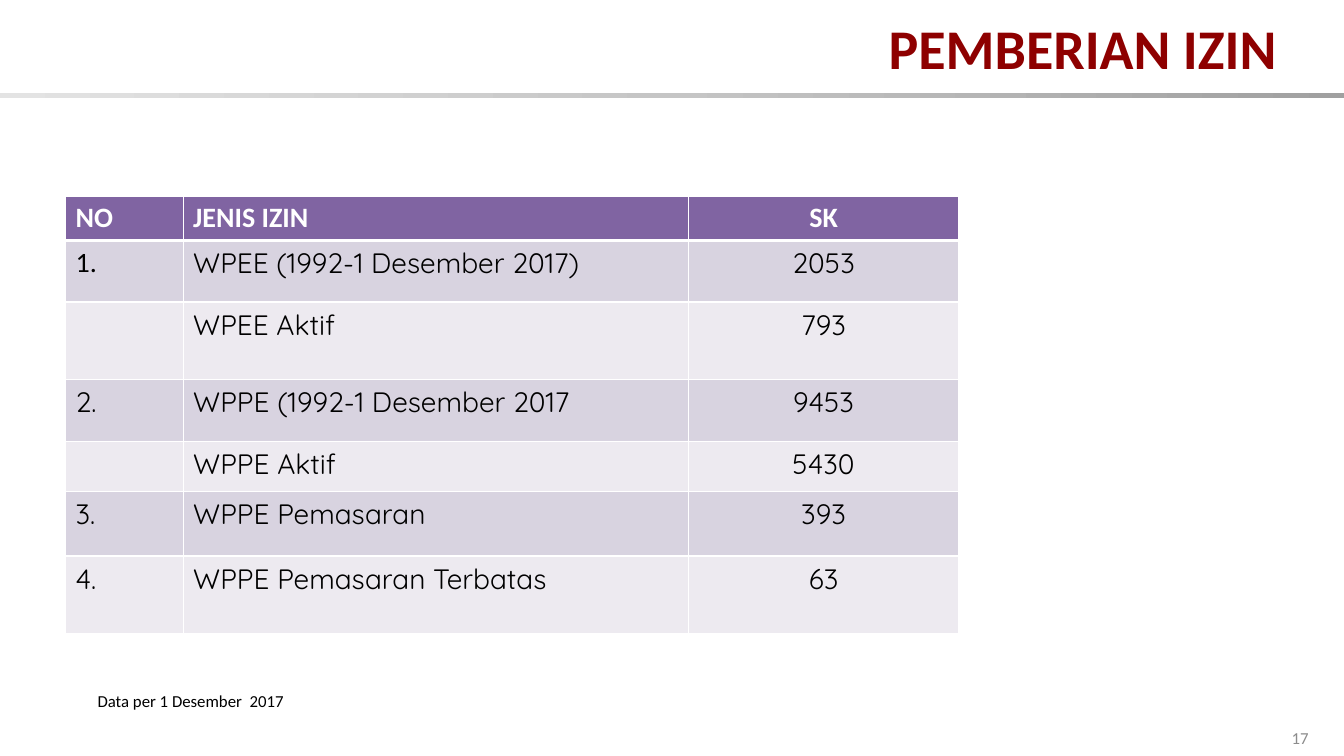
from copy import deepcopy

from lxml import etree
from pptx import Presentation
from pptx.dml.color import RGBColor
from pptx.enum.shapes import MSO_SHAPE
from pptx.enum.text import MSO_ANCHOR, PP_ALIGN
from pptx.oxml.ns import qn
from pptx.util import Pt

LEFT, CENTER, RIGHT = PP_ALIGN.LEFT, PP_ALIGN.CENTER, PP_ALIGN.RIGHT
TOP, MIDDLE = MSO_ANCHOR.TOP, MSO_ANCHOR.MIDDLE
RECT = MSO_SHAPE.RECTANGLE

COLORS = {
    "white": "FFFFFF", "black": "000000", "title": "8E0000", "number": "8C8C8C",
    "header": "8064A2", "odd": "D8D3E0", "even": "EDEAF0",
    "dark": "A0A0A0", "mid": "C5C5C5", "light": "E3E3E3",
}


def rgb(name):
    return RGBColor.from_string(COLORS[name])


def write(tf, text, size=20, font="Calibri", color="black", bold=False,
          align=LEFT, anchor=TOP):
    tf.word_wrap = True
    tf.vertical_anchor = anchor
    p = tf.paragraphs[0]
    p.alignment = align
    r = p.add_run()
    r.text = text
    r.font.size, r.font.name, r.font.bold = Pt(size), font, bold
    r.font.color.rgb = rgb(color)


prs = Presentation()
prs.slide_width, prs.slide_height = Pt(960), Pt(540)
s = prs.slides.add_slide(prs.slide_layouts[6])

# Gradient rule under the title
rule = s.shapes.add_shape(RECT, Pt(0), Pt(66.4), Pt(960), Pt(3.6))
rule.shadow.inherit = False
rule.line.fill.background()
rule.fill.gradient()
rule.fill.gradient_angle = 180
stop_list = rule._element.spPr.find(".//" + qn("a:gsLst"))
stop_list.insert(1, deepcopy(stop_list[0]))
for i, (stop, name) in enumerate(zip(rule.fill.gradient_stops, ("dark", "mid", "light"))):
    stop.position = i / 2
    stop.color.rgb = rgb(name)

# Permit table
rows = [
    ("NO", "JENIS IZIN", "SK"),
    ("1.", "WPEE (1992-1 Desember 2017)", "2053"),
    ("", "WPEE Aktif", "793"),
    ("2.", "WPPE (1992-1 Desember 2017", "9453"),
    ("", "WPPE Aktif", "5430"),
    ("3.", "WPPE Pemasaran", "393"),
    ("4.", "WPPE Pemasaran Terbatas", "63"),
]
col_widths = (84, 361, 193)
row_heights = (29, 44, 55.4, 44, 36, 46, 55.4)
table = s.shapes.add_table(len(rows), len(col_widths), Pt(46.8), Pt(140),
                           Pt(sum(col_widths)), Pt(sum(row_heights))).table
for col, width in zip(table.columns, col_widths):
    col.width = Pt(width)
for i, (row, height) in enumerate(zip(rows, row_heights)):
    table.rows[i].height = Pt(height)
    for j, text in enumerate(row):
        cell = table.cell(i, j)
        head = i == 0
        if text:
            write(cell.text_frame, text, bold=head,
                  font="Calibri" if head or (i, j) == (1, 0) else "Quicksand",
                  color="white" if head else "black",
                  align=CENTER if j == 2 else LEFT)
        # White borders go before the fill, thicker below the header
        tcPr = cell._tc.get_or_add_tcPr()
        for side in ("lnL", "lnR", "lnT", "lnB"):
            thick = (i, side) in ((0, "lnB"), (1, "lnT"))
            ln = etree.SubElement(tcPr, qn("a:" + side), w=str(Pt(3 if thick else 1)))
            fill = etree.SubElement(ln, qn("a:solidFill"))
            etree.SubElement(fill, qn("a:srgbClr"), val=COLORS["white"])
        cell.fill.solid()
        cell.fill.fore_color.rgb = rgb("header" if head else "odd" if i % 2 else "even")

# Title and data note
title = s.shapes.add_textbox(Pt(145.4), Pt(12.2), Pt(782.6), Pt(42.5))
write(title.text_frame, "PEMBERIAN IZIN ", size=40, color="title", bold=True,
      align=RIGHT, anchor=MIDDLE)
note = s.shapes.add_textbox(Pt(62.6), Pt(489.6), Pt(345), Pt(21.8))
write(note.text_frame, "Data per 1 Desember  2017", size=12)

# Slide number
number = s.shapes.add_shape(RECT, Pt(912.2), Pt(511.2), Pt(33), Pt(31.7))
number.shadow.inherit = False
number.fill.solid()
number.fill.fore_color.rgb = rgb("white")
number.line.fill.background()
write(number.text_frame, "17", size=12, color="number", align=CENTER, anchor=MIDDLE)

prs.save("out.pptx")
